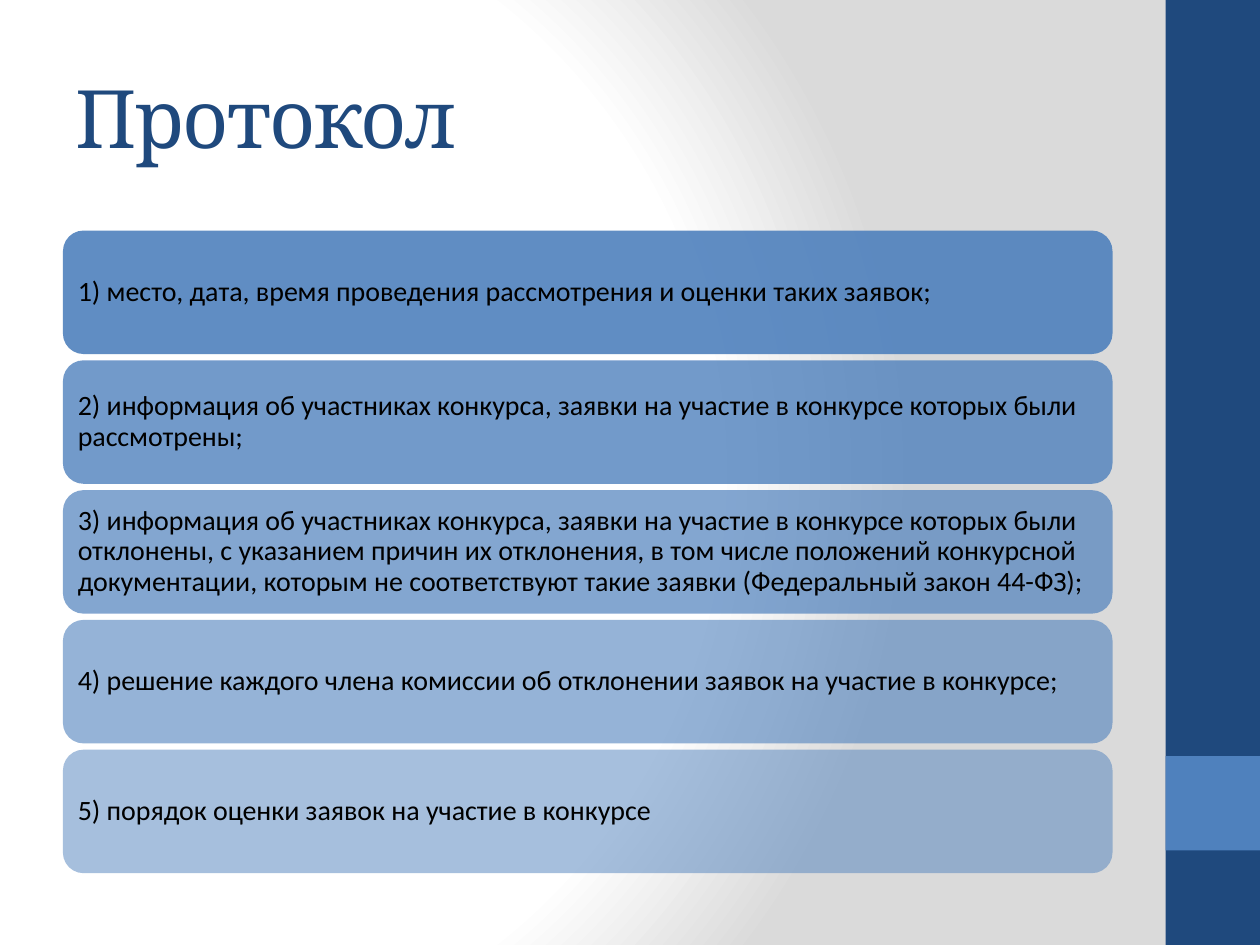
from pptx import Presentation
from pptx.dml.color import RGBColor
from pptx.enum.shapes import MSO_SHAPE
from pptx.enum.text import MSO_ANCHOR, PP_ALIGN
from pptx.oxml import parse_xml
from pptx.oxml.ns import nsdecls, qn
from pptx.util import Inches, Pt
from lxml.etree import SubElement

COLORS = {
    "navy": "1F497D",
    "blue": "4F81BD",
    "black": "000000",
    "white": "FFFFFF",
    "gray": "DADADA",
}

ITEMS = [
    "1) место, дата, время проведения рассмотрения и оценки таких заявок;",
    "2) информация об участниках конкурса, заявки на участие в конкурсе которых были рассмотрены;",
    "3) информация об участниках конкурса, заявки на участие в конкурсе которых были отклонены, "
    "с указанием причин их отклонения, в том числе положений конкурсной документации, "
    "которым не соответствуют такие заявки (Федеральный закон 44-ФЗ);",
    "4) решение каждого члена комиссии об отклонении заявок на участие в конкурсе;",
    "5) порядок оценки заявок на участие в конкурсе",
]

LEFT, WIDTH = 0.5, 8.33
FIRST_TOP, PITCH, BAR_HEIGHT = 1.83, 1.03, 0.98


def color(name):
    return RGBColor.from_string(COLORS[name])


def set_background(page):
    """Fill the page with a circular gradient, which python-pptx cannot set itself."""
    page.background.fill.solid()
    stops = [(0, "white"), (75, "white"), (100, "gray")]
    stop_xml = "".join(
        f'<a:gs pos="{position * 1000}"><a:srgbClr val="{COLORS[name]}"/></a:gs>'
        for position, name in stops
    )
    gradient = parse_xml(
        f'<a:gradFill {nsdecls("a")} rotWithShape="1"><a:gsLst>{stop_xml}</a:gsLst>'
        '<a:path path="circle">'
        '<a:fillToRect l="20000" t="50000" r="100000" b="50000"/>'
        "</a:path></a:gradFill>"
    )
    solid = page.element.find(".//" + qn("p:bgPr")).find(qn("a:solidFill"))
    solid.getparent().replace(solid, gradient)


def add_filled_shape(shapes, kind, left, top, width, height, fill):
    shape = shapes.add_shape(kind, Inches(left), Inches(top), Inches(width), Inches(height))
    shape.shadow.inherit = False
    shape.fill.solid()
    shape.fill.fore_color.rgb = color(fill)
    shape.line.fill.background()
    return shape


def set_opacity(shape, percent):
    rgb = shape.element.spPr.find(qn("a:solidFill")).find(qn("a:srgbClr"))
    SubElement(rgb, qn("a:alpha")).set("val", str(percent * 1000))


def format_text(box, font_name, size, font_color):
    frame = box.text_frame
    frame.word_wrap = True
    frame.vertical_anchor = MSO_ANCHOR.MIDDLE
    para = frame.paragraphs[0]
    para.alignment = PP_ALIGN.LEFT
    span = para.runs[0]
    span.font.name = font_name
    span.font.size = Pt(size)
    span.font.color.rgb = color(font_color)
    return span


def set_title(page, text):
    title = page.shapes.title
    title.left, title.top = Inches(LEFT), Inches(0.3)
    title.width, title.height = Inches(WIDTH), Inches(1.25)
    title.text_frame.text = text
    span = format_text(title, "Cambria", 46, "navy")
    span.font._element.set("spc", "-100")


def add_item_bar(shapes, text, top, opacity):
    bar = add_filled_shape(
        shapes, MSO_SHAPE.ROUNDED_RECTANGLE, LEFT, top, WIDTH, BAR_HEIGHT, "blue"
    )
    set_opacity(bar, opacity)
    frame = bar.text_frame
    frame.text = text
    frame.margin_left = frame.margin_right = Inches(0.07)
    frame.margin_top = frame.margin_bottom = Inches(0.07)
    frame.paragraphs[0].line_spacing = 0.9
    format_text(bar, "Calibri", 16, "black")


def main():
    deck = Presentation()
    deck.slide_width, deck.slide_height = Inches(10), Inches(7.5)
    page = deck.slides.add_slide(deck.slide_layouts[5])

    set_background(page)
    add_filled_shape(page.shapes, MSO_SHAPE.RECTANGLE, 9.25, 0, 0.75, 7.5, "navy")
    add_filled_shape(page.shapes, MSO_SHAPE.RECTANGLE, 9.25, 6, 0.75, 0.75, "blue")
    set_title(page, "Протокол")

    item_list = page.shapes.add_group_shape()
    for index, text in enumerate(ITEMS):
        add_item_bar(item_list.shapes, text, FIRST_TOP + index * PITCH, 90 - 10 * index)

    deck.save("out.pptx")


if __name__ == "__main__":
    main()
